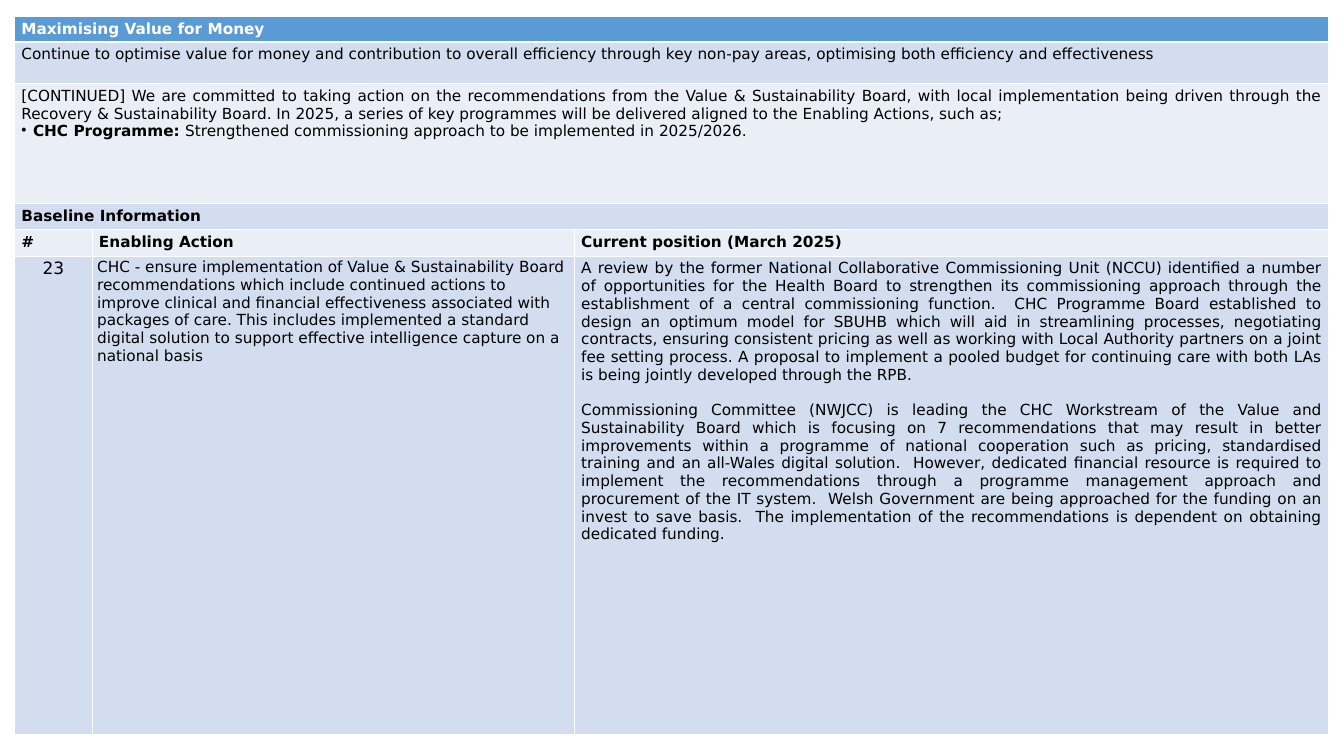
from pptx import Presentation
from pptx.dml.color import RGBColor as RGB
from pptx.enum.text import MSO_ANCHOR as ANCHOR, PP_ALIGN as ALIGN
from pptx.oxml import parse_xml
from pptx.oxml.ns import nsdecls
from pptx.util import Pt

PX = 9144  # 100 px to the inch
FONT = "DejaVu Sans"
HUES = {"head": "5B9BD5", "dark": "D2DEEF", "light": "EAEFF7",
        "white": "FFFFFF", "black": "000000"}
LEFT, MID, JUST = ALIGN.LEFT, ALIGN.CENTER, ALIGN.JUSTIFY

# Wording
goal = ("Continue to optimise value for money and contribution to overall efficiency through "
        "key non-pay areas, optimising both efficiency and effectiveness")
intro = ("[CONTINUED] We are committed to taking action on the recommendations from the Value & "
         "Sustainability Board, with local implementation being driven through the Recovery & "
         "Sustainability Board. In 2025, a series of key programmes will be delivered aligned to "
         "the Enabling Actions, such as;")
label = "CHC Programme: "
plan = "Strengthened commissioning approach to be implemented in 2025/2026."
action = ("CHC - ensure implementation of Value & Sustainability Board recommendations which "
          "include continued actions to improve clinical and financial effectiveness associated "
          "with packages of care. This includes implemented a standard digital solution to "
          "support effective intelligence capture on a national basis")
review = ("A review by the former National Collaborative Commissioning Unit (NCCU) identified a "
          "number of opportunities for the Health Board to strengthen its commissioning approach "
          "through the establishment of a central commissioning function.  CHC Programme Board "
          "established to design an optimum model for SBUHB which will aid in streamlining "
          "processes, negotiating contracts, ensuring consistent pricing as well as working with "
          "Local Authority partners on a joint fee setting process. A proposal to implement a "
          "pooled budget for continuing care with both LAs is being jointly developed through "
          "the RPB.")
work = ("Commissioning Committee (NWJCC) is leading the CHC Workstream of the Value and "
        "Sustainability Board which is focusing on 7 recommendations that may result in better "
        "improvements within a programme of national cooperation such as pricing, standardised "
        "training and an all-Wales digital solution.  However, dedicated financial resource is "
        "required to implement the recommendations through a programme management approach and "
        "procurement of the IT system.  Welsh Government are being approached for the funding on "
        "an invest to save basis.  The implementation of the recommendations is dependent on "
        "obtaining dedicated funding.")

# Rows: height, fill, bold, cells of (alignment, paragraphs)
rows = [
    (42, "head", True, [(LEFT, ["Maximising Value for Money"])]),
    (68, "dark", False, [(LEFT, [goal])]),
    (196, "light", False, [(JUST, [intro, label])]),
    (42, "dark", True, [(JUST, ["Baseline Information"])]),
    (44, "light", True, [(JUST, ["#"]), (JUST, ["Enabling Action"]),
                         (JUST, ["Current position (March 2025)"])]),
    (783, "dark", False, [(MID, ["23"]), (LEFT, [action]), (JUST, [review, work])]),
]
cols = [127, 789, 1234]


def edge(cell, row):
    """White borders, with a thick rule under the heading row."""
    props = cell._tc.get_or_add_tcPr()
    for spot, side in enumerate("LRTB"):
        thick = (row, side) in [(0, "B"), (1, "T")]
        props.insert(spot, parse_xml(
            f'<a:ln{side} {nsdecls("a")} w="{Pt(3 if thick else 1)}"><a:solidFill>'
            f'<a:srgbClr val="{HUES["white"]}"/></a:solidFill></a:ln{side}>'))


def style(run, bold, hue="black", size=18):
    font = run.font
    font.name, font.size, font.bold = FONT, Pt(size), bold
    font.color.rgb = RGB.from_string(HUES[hue])


# Slide
deck = Presentation()
deck.slide_width, deck.slide_height = 2199 * PX, 1237 * PX
slide = deck.slides.add_slide(deck.slide_layouts[6])

# Table grid
grid = slide.shapes.add_table(len(rows), len(cols), 24 * PX, 27 * PX,
                              sum(cols) * PX, sum(r[0] for r in rows) * PX).table
for col, width in zip(grid.columns, cols):
    col.width = width * PX

# Cells
for i, (high, fill, bold, cells) in enumerate(rows):
    grid.rows[i].height = high * PX
    for j in range(len(cols)):
        cell = grid.cell(i, j)
        cell.fill.solid()
        cell.fill.fore_color.rgb = RGB.from_string(HUES[fill])
        edge(cell, i)
    if len(cells) == 1:
        grid.cell(i, 0).merge(grid.cell(i, len(cols) - 1))
    for j, (align, texts) in enumerate(cells):
        cell = grid.cell(i, j)
        tight = i == 5 and j < 2
        cell.margin_left = cell.margin_right = (8 if tight else 11) * PX
        cell.margin_top = cell.margin_bottom = (4 if tight else 6) * PX
        cell.vertical_anchor = ANCHOR.MIDDLE if bold else ANCHOR.TOP
        cell.text_frame.text = "\n".join(texts)
        for para in cell.text_frame.paragraphs:
            para.alignment = align
            for run in para.runs:
                style(run, bold, "white" if i == 0 else "black", 20 if align == MID else 18)

# Programme bullet
item = grid.cell(2, 0).text_frame.paragraphs[1]
item.alignment = LEFT
item.runs[0].font.bold = True
rest = item.add_run()
rest.text = plan
style(rest, False)
props = item._p.get_or_add_pPr()
props.set("marL", str(19 * PX))
props.set("indent", str(-19 * PX))
props.append(parse_xml(f'<a:buChar {nsdecls("a")} char="•"/>'))

# Gap between the two position paragraphs
grid.cell(5, 2).text_frame.paragraphs[1].space_before = Pt(21)

deck.save("out.pptx")
